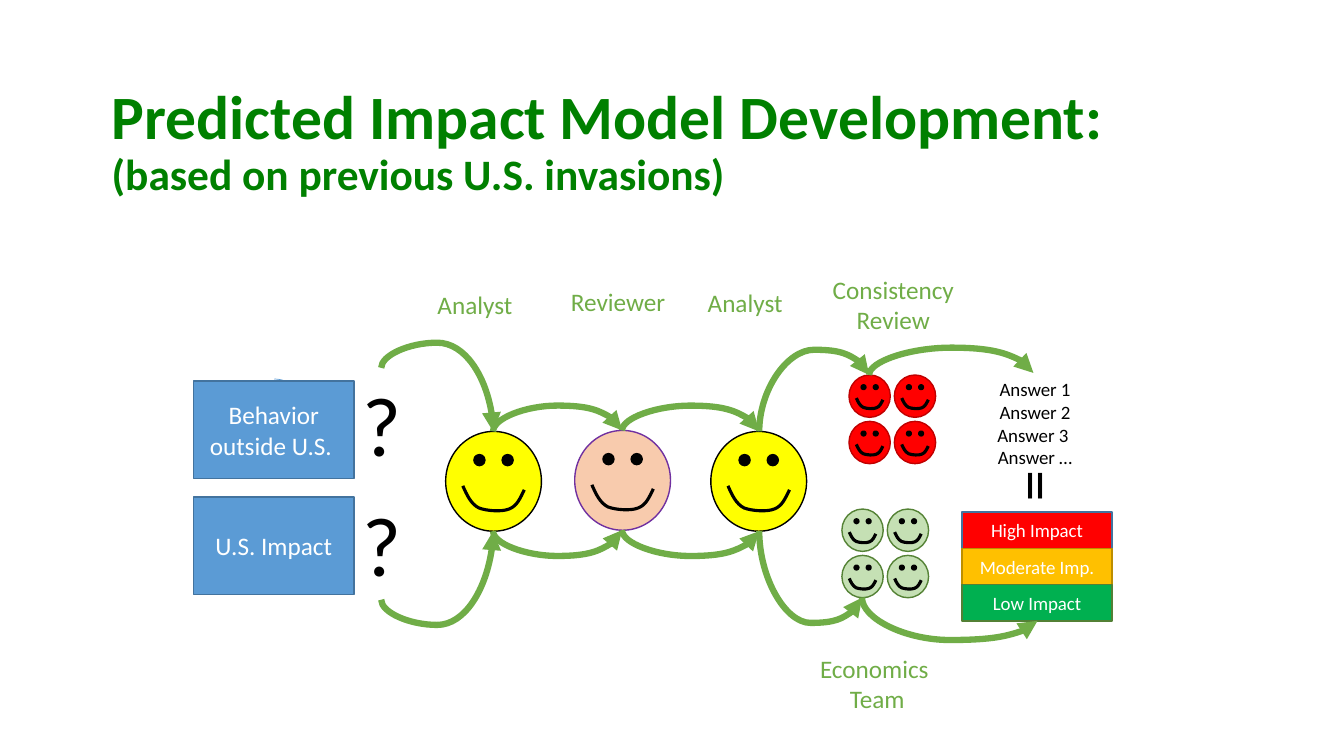
import pptx
import pptx.dml.color
import pptx.enum.shapes
import pptx.enum.text
import pptx.oxml.ns
import pptx.util
from pptx.util import Inches

RGBColor = pptx.dml.color.RGBColor
MSO_SHAPE = pptx.enum.shapes.MSO_SHAPE
ALIGN = pptx.enum.text.PP_ALIGN
ANCHOR = pptx.enum.text.MSO_ANCHOR
qn = pptx.oxml.ns.qn

BLACK = RGBColor(0x00, 0x00, 0x00)
WHITE = RGBColor(0xFF, 0xFF, 0xFF)
TITLE_GREEN = RGBColor(0x00, 0x80, 0x00)
FLOW_GREEN = RGBColor(0x70, 0xAD, 0x47)
BLUE = RGBColor(0x5B, 0x9B, 0xD5)
DARK_BLUE = RGBColor(0x43, 0x73, 0x9E)
YELLOW = RGBColor(0xFF, 0xFF, 0x00)
PEACH = RGBColor(0xF8, 0xCB, 0xAD)
PURPLE = RGBColor(0x70, 0x30, 0xA0)
RED = RGBColor(0xFF, 0x00, 0x00)
DARK_RED = RGBColor(0xC0, 0x00, 0x00)
PALE_GREEN = RGBColor(0xC5, 0xE0, 0xB4)
LEAF_GREEN = RGBColor(0x54, 0x82, 0x35)
AMBER = RGBColor(0xFF, 0xC0, 0x00)
DARK_AMBER = RGBColor(0xBD, 0x8E, 0x00)
GREEN = RGBColor(0x00, 0xB0, 0x50)
DARK_GREEN = RGBColor(0x53, 0x80, 0x35)

# Face proportions, measured on a face of this size
FACE_WIDTH, FACE_HEIGHT = 0.95, 0.99
EYES, EYE_TOP, EYE_SIZE = (0.28, 0.56), 0.23, 0.11
# Start of the smile, then three points for each of its three curves
SMILE = [(0.17, 0.54),
         (0.21, 0.63), (0.25, 0.72), (0.33, 0.76),
         (0.41, 0.79), (0.56, 0.80), (0.63, 0.77),
         (0.71, 0.74), (0.74, 0.66), (0.78, 0.58)]


def write_text(shape, text, size=18, color=BLACK, bold=False, align=ALIGN.CENTER,
               anchor=ANCHOR.TOP, sizes=None):
    """Write one paragraph per line; sizes gives each soft-broken part its own size."""
    frame = shape.text_frame
    frame.word_wrap = True
    frame.vertical_anchor = anchor
    frame.text = text
    for paragraph in frame.paragraphs:
        paragraph.alignment = align
        for index, run in enumerate(paragraph.runs):
            run.font.name = "Calibri"
            run.font.size = pptx.util.Pt(sizes[index] if sizes else size)
            run.font.bold = bold
            run.font.color.rgb = color


def add_text(slide, text, left, top, width, height, **text_format):
    box = slide.shapes.add_textbox(Inches(left), Inches(top), Inches(width), Inches(height))
    write_text(box, text, **text_format)
    return box


def add_filled(shapes, kind, left, top, width, height, fill, line):
    shape = shapes.add_shape(kind, Inches(left), Inches(top), Inches(width), Inches(height))
    shape.shadow.inherit = False
    shape.fill.solid()
    shape.fill.fore_color.rgb = fill
    shape.line.color.rgb = line
    shape.line.width = pptx.util.Pt(1)
    return shape


def add_box(shapes, text, left, top, width, height, fill, line, size):
    box = add_filled(shapes, MSO_SHAPE.RECTANGLE, left, top, width, height, fill, line)
    write_text(box, text, size=size, color=WHITE, anchor=ANCHOR.MIDDLE)


def bend_segments(shape):
    """Turn every three straight segments of an outline into one cubic curve."""
    outline = shape._element.find(".//" + qn("a:path"))
    segments = outline.findall(qn("a:lnTo"))
    for index in range(0, len(segments), 3):
        curve = outline.makeelement(qn("a:cubicBezTo"), {})
        for segment in segments[index:index + 3]:
            curve.append(segment[0])
            outline.remove(segment)
        outline.append(curve)


def add_face(shapes, left, top, fill, line, width=FACE_WIDTH, height=FACE_HEIGHT):
    scale_x, scale_y = width / FACE_WIDTH, height / FACE_HEIGHT
    add_filled(shapes, MSO_SHAPE.OVAL, left, top, width, height, fill, line)
    for eye in EYES:
        add_filled(shapes, MSO_SHAPE.OVAL, left + eye * scale_x, top + EYE_TOP * scale_y,
                   EYE_SIZE * scale_x, EYE_SIZE * scale_y, BLACK, BLACK)
    points = [(Inches(left + x * scale_x), Inches(top + y * scale_y)) for x, y in SMILE]
    builder = shapes.build_freeform(*points[0])
    builder.add_line_segments(points[1:], close=False)
    smile = builder.convert_to_shape()
    bend_segments(smile)
    smile.shadow.inherit = False
    smile.fill.background()
    smile.line.color.rgb = BLACK
    smile.line.width = pptx.util.Pt(2.25)


def add_team(slide, left, top, fill, line):
    team = slide.shapes.add_group_shape()
    for column, row in ((0, 0), (0, 1), (1, 1), (1, 0)):
        add_face(team.shapes, left + 0.45 * column, top + 0.46 * row, fill, line, 0.41, 0.42)


def add_curve(slide, left, top, right, bottom, color, width):
    curve = slide.shapes.add_connector(pptx.enum.shapes.MSO_CONNECTOR.CURVE, Inches(left),
                                       Inches(top), Inches(right), Inches(bottom))
    curve.line.color.rgb = color
    curve.line.width = pptx.util.Pt(width)
    properties = curve._element.spPr
    line = properties.find(qn("a:ln"))
    line.append(line.makeelement(qn("a:tailEnd"), {"type": "triangle"}))
    properties.append(properties.makeelement(qn("a:effectLst"), {}))
    return properties


def add_arch(slide, start, end, crest):
    """Arrow that leaves start vertically, turns at the height crest and enters end vertically."""
    (x1, y1), (x2, y2) = start, end
    width, height = abs(y2 - y1), x2 - x1
    left, top = (x1 + x2 - width) / 2, (y1 + y2 - height) / 2
    properties = add_curve(slide, left, top, left + width, top + height, FLOW_GREEN, 4.5)
    # The connector is drawn lying down and then turned upright
    falling = y2 > y1
    frame = properties.find(qn("a:xfrm"))
    frame.set("rot", str((270 if falling else 90) * 60000))
    frame.set("flipH", "1")
    if not falling:
        frame.set("flipV", "1")
    guides = properties.find(qn("a:prstGeom")).get_or_add_avLst()
    adjustment = round((crest - y1) / (y2 - y1) * 100000)
    guides.append(guides.makeelement(qn("a:gd"), {"name": "adj1", "fmla": f"val {adjustment}"}))


def main():
    presentation = pptx.Presentation()
    presentation.slide_width, presentation.slide_height = Inches(13.33), Inches(7.5)
    slide = presentation.slides.add_slide(presentation.slide_layouts[6])

    # Title
    title = add_text(slide, "Predicted Impact Model Development: \v(based on previous U.S. invasions)",
                     1.01, 0.21, 11.69, 2.42, sizes=(44, 31), color=TITLE_GREEN, bold=True,
                     align=ALIGN.LEFT, anchor=ANCHOR.MIDDLE)
    title.text_frame.paragraphs[0].line_spacing = 0.9
    title.text_frame.paragraphs[0].space_after = pptx.util.Pt(6)

    # Question marks
    for top in (3.65, 4.84):
        add_text(slide, "?", 3.5, top, 0.56, 1.11, size=60, align=ALIGN.LEFT)

    # Analysts, reviewer and economics team
    people = [(4.42, 4.28, YELLOW, BLACK), (5.7, 4.27, PEACH, PURPLE), (7.05, 4.28, YELLOW, BLACK)]
    for left, top, fill, line in people:
        add_face(slide.shapes.add_group_shape().shapes, left, top, fill, line)
    add_team(slide, 8.35, 5.05, PALE_GREEN, LEAF_GREEN)

    # Impact levels
    levels = [("High Impact", RED, DARK_BLUE), ("Moderate Imp.", AMBER, DARK_AMBER),
              ("Low Impact", GREEN, DARK_GREEN)]
    scale = slide.shapes.add_group_shape()
    for row, (text, fill, line) in enumerate(levels):
        add_box(scale.shapes, text, 9.54, 5.08 + 0.36 * row, 1.49, 0.36, fill, line, 13.5)

    # Answers and the equals sign below them
    add_text(slide, " Answer 1\n Answer 2\nAnswer 3\n Answer …", 9.51, 3.7, 1.47, 1.01, size=13.5)
    equals = add_text(slide, "=", 9.9, 4.39, 0.84, 0.86, size=45)
    equals.rotation = 90

    # Questions, with the curve that runs behind the upper one
    add_curve(slide, 2.72, 3.76, 3.47, 4.51, BLUE, 0.5)
    for text, top in (("U.S. Impact", 4.93), ("Behavior outside U.S. ", 3.78)):
        add_box(slide.shapes, text, 1.92, top, 1.59, 0.97, BLUE, DARK_BLUE, 18)

    # Consistency reviewers
    add_team(slide, 8.42, 3.72, RED, DARK_RED)

    # Flow above and below the faces: stops, then the crest of each arch
    upper_stops = [(3.78, 3.65), (4.89, 4.28), (6.17, 4.27), (7.53, 4.28), (8.62, 3.72), (10.25, 3.7)]
    upper_crests = [3.4, 4.02, 4.02, 3.47, 3.45]
    lower_stops = [(3.78, 5.95), (4.89, 5.27), (6.17, 5.26), (7.53, 5.27), (8.55, 5.93), (10.29, 6.16)]
    lower_crests = [6.2, 5.52, 5.52, 6.18, 6.35]
    for stops, crests in ((upper_stops, upper_crests), (lower_stops, lower_crests)):
        for start, end, crest in zip(stops, stops[1:], crests):
            add_arch(slide, start, end, crest)

    # Role labels
    labels = [("Analyst", 3.65, 2.82, 0.4), ("Reviewer", 5.07, 2.79, 0.4), ("Analyst", 6.33, 2.8, 0.4),
              ("Economics \nTeam", 7.64, 6.43, 0.71), ("Consistency Review", 7.8, 2.67, 0.71)]
    for text, left, top, height in labels:
        add_text(slide, text, left, top, 2.12, height, color=FLOW_GREEN)

    presentation.save("out.pptx")


if __name__ == "__main__":
    main()
